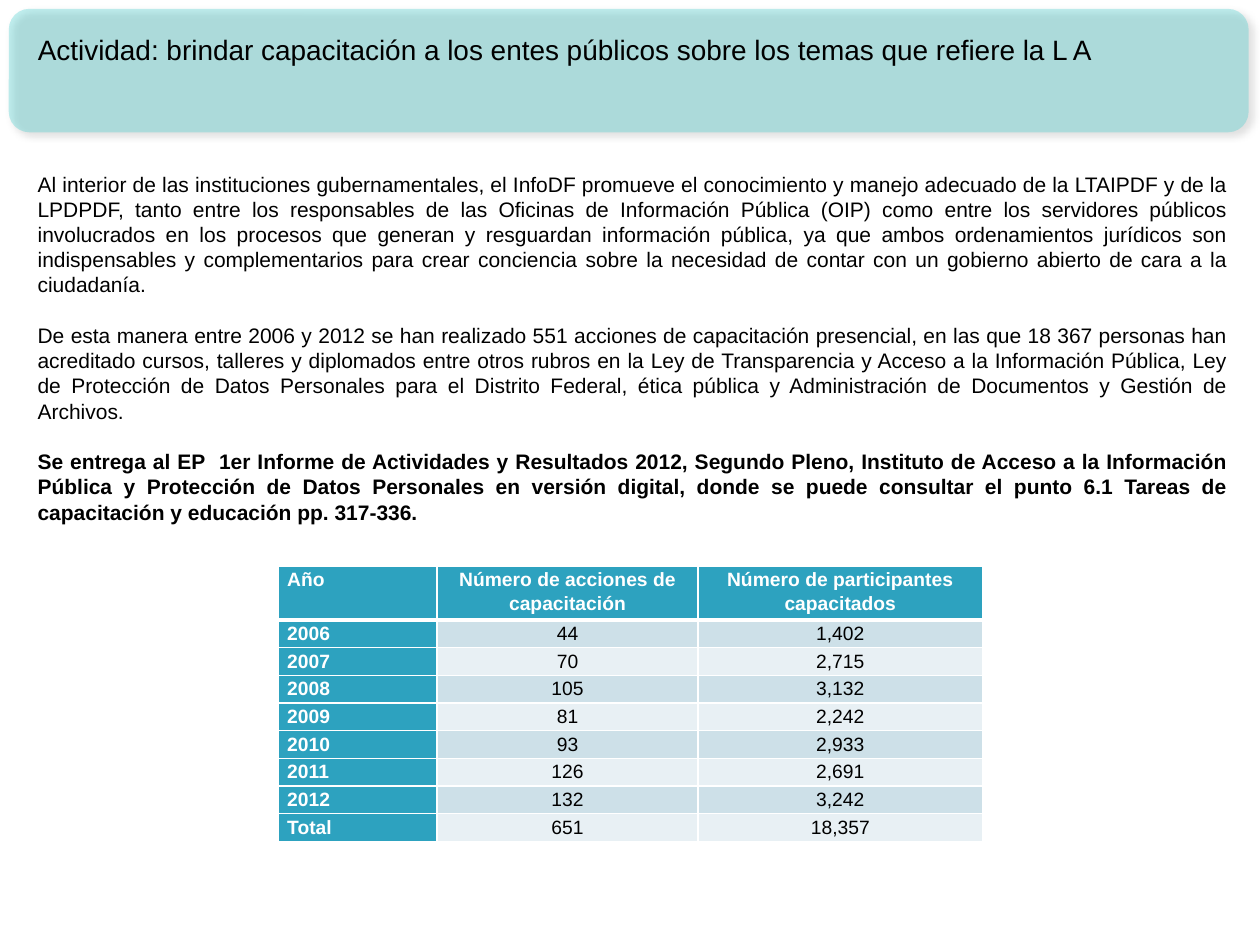
from lxml import etree
from pptx import Presentation
from pptx.dml.color import RGBColor
from pptx.enum import shapes, text
from pptx.oxml import parse_xml
from pptx.oxml.ns import nsdecls, qn
from pptx.util import Inches, Pt

FONT = "Arial"
COLORS = {
    "banner": "33CCCC",
    "text": "000000",
    "white": "FFFFFF",
    "header": "2DA2BF",
    "dark_band": "CDE0E8",
    "light_band": "E8F0F4",
}
TITLE = "Actividad: brindar capacitación a los entes públicos sobre los temas que refiere la L A"
PARAGRAPHS = [
    "Al interior de las instituciones gubernamentales, el InfoDF promueve el conocimiento y manejo "
    "adecuado de la LTAIPDF y de la LPDPDF, tanto entre los responsables de las Oficinas de "
    "Información Pública (OIP) como entre los servidores públicos involucrados en los procesos que "
    "generan y resguardan información pública, ya que ambos ordenamientos jurídicos son "
    "indispensables y complementarios para crear conciencia sobre la necesidad de contar con un "
    "gobierno abierto de cara a la ciudadanía.",
    "De esta manera entre 2006 y 2012 se han realizado 551 acciones de capacitación presencial, en "
    "las que 18 367 personas han acreditado cursos, talleres y diplomados entre otros rubros en la "
    "Ley de Transparencia y Acceso a la Información Pública, Ley de Protección de Datos Personales "
    "para el Distrito Federal, ética pública y Administración de Documentos y Gestión de Archivos.",
    "Se entrega al EP  1er Informe de Actividades y Resultados 2012, Segundo Pleno, Instituto de "
    "Acceso a la Información Pública y Protección de Datos Personales en versión digital, donde se "
    "puede consultar el punto 6.1 Tareas de capacitación y educación pp. 317-336.",
]
ROWS = [
    ("Año", "Número de acciones de capacitación", "Número de participantes capacitados"),
    ("2006", "44", "1,402"),
    ("2007", "70", "2,715"),
    ("2008", "105", "3,132"),
    ("2009", "81", "2,242"),
    ("2010", "93", "2,933"),
    ("2011", "126", "2,691"),
    ("2012", "132", "3,242"),
    ("Total", "651", "18,357"),
]
COLUMN_WIDTHS = [1.26, 2.07, 2.26]
HEADER_HEIGHT, ROW_HEIGHT = 0.43, 0.22


def color(name):
    return RGBColor.from_string(COLORS[name])


def format_paragraph(paragraph, size, color_name="text", bold=False, align=text.PP_ALIGN.LEFT):
    paragraph.alignment = align
    paragraph.font.name = FONT
    paragraph.font.size = Pt(size)
    paragraph.font.bold = bold
    paragraph.font.color.rgb = color(color_name)


def add_banner(slide):
    """Add the translucent, shadowed band behind the title."""
    banner = slide.shapes.add_shape(
        shapes.MSO_SHAPE.ROUNDED_RECTANGLE, Inches(0.07), Inches(0.07), Inches(9.84), Inches(0.98))
    banner.fill.solid()
    banner.fill.fore_color.rgb = color("banner")
    banner.line.fill.background()
    fill_color = banner.fill._xPr.find(qn("a:solidFill"))[0]
    etree.SubElement(fill_color, qn("a:alpha"), val="30000")
    banner._element.spPr.append(parse_xml(
        f'<a:effectLst {nsdecls("a")}>'
        f'<a:outerShdw blurRad="{Pt(4)}" dist="{Pt(3)}" dir="2700000" algn="tl" rotWithShape="0">'
        '<a:srgbClr val="000000"><a:alpha val="40000"/></a:srgbClr>'
        '</a:outerShdw></a:effectLst>'))
    slide.shapes._spTree.insert(2, banner._element)


def set_title(slide):
    title = slide.shapes.title
    title.left, title.top = Inches(0.2), Inches(0.21)
    title.width, title.height = Inches(9.06), Inches(0.37)
    frame = title.text_frame
    frame.text = TITLE
    frame.word_wrap = True
    frame.auto_size = text.MSO_AUTO_SIZE.NONE
    frame.vertical_anchor = text.MSO_ANCHOR.TOP
    format_paragraph(frame.paragraphs[0], 16)


def add_body(slide):
    body = slide.shapes.add_textbox(Inches(0.2), Inches(1.31), Inches(9.65), Inches(3.13))
    frame = body.text_frame
    frame.word_wrap = True
    for index, content in enumerate(PARAGRAPHS):
        paragraph = frame.add_paragraph() if index else frame.paragraphs[0]
        paragraph.text = content
        if index:
            paragraph.space_before = Pt(14.5)
        format_paragraph(paragraph, 12, bold=index == len(PARAGRAPHS) - 1,
                         align=text.PP_ALIGN.JUSTIFY)


def set_borders(cell, bottom_width):
    properties = cell._tc.get_or_add_tcPr()
    widths = {"lnL": 1, "lnR": 1, "lnT": 1, "lnB": bottom_width}
    for index, (side, width) in enumerate(widths.items()):
        properties.insert(index, parse_xml(
            f'<a:{side} {nsdecls("a")} w="{Pt(width)}"><a:solidFill>'
            f'<a:srgbClr val="{COLORS["white"]}"/></a:solidFill></a:{side}>'))


def fill_cell(cell, content, row, column):
    is_heading = row == 0 or column == 0
    band = "dark_band" if row % 2 else "light_band"
    cell.fill.solid()
    cell.fill.fore_color.rgb = color("header" if is_heading else band)
    cell.margin_left = cell.margin_right = Inches(0.07)
    cell.margin_top = cell.margin_bottom = 0
    cell.text = content
    paragraph = cell.text_frame.paragraphs[0]
    paragraph.line_spacing = 1.15
    format_paragraph(paragraph, 11, "white" if is_heading else "text", is_heading,
                     text.PP_ALIGN.CENTER if column else text.PP_ALIGN.LEFT)
    set_borders(cell, 1 if row else 3)


def add_training_table(slide):
    height = HEADER_HEIGHT + ROW_HEIGHT * (len(ROWS) - 1)
    table = slide.shapes.add_table(
        len(ROWS), len(COLUMN_WIDTHS), Inches(2.21), Inches(4.49),
        Inches(sum(COLUMN_WIDTHS)), Inches(height)).table
    table.first_col = True
    for column, width in zip(table.columns, COLUMN_WIDTHS):
        column.width = Inches(width)
    for row, values in enumerate(ROWS):
        table.rows[row].height = Inches(ROW_HEIGHT if row else HEADER_HEIGHT)
        for column, content in enumerate(values):
            fill_cell(table.cell(row, column), content, row, column)


def main():
    presentation = Presentation()
    presentation.slide_width = Inches(10)
    presentation.slide_height = Inches(7.5)
    slide = presentation.slides.add_slide(presentation.slide_layouts[5])
    add_banner(slide)
    set_title(slide)
    add_body(slide)
    add_training_table(slide)
    presentation.save("out.pptx")


if __name__ == "__main__":
    main()
